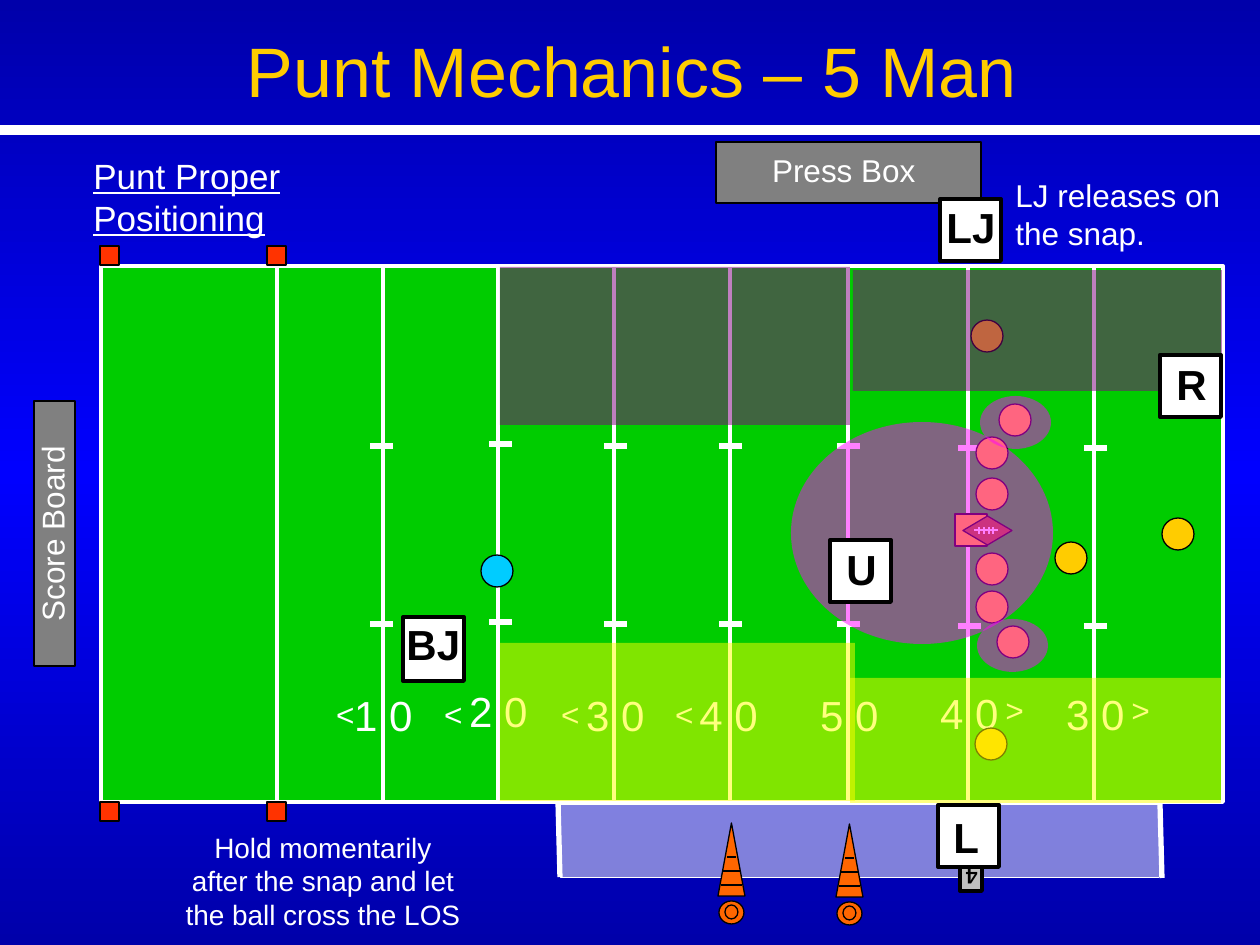
from copy import deepcopy

from pptx import Presentation
from pptx import util as u
from pptx.dml.color import RGBColor
from pptx.enum import dml, shapes, text
from pptx.oxml import ns, xmlchemy

PX = u.Inches(1) / 126
FONT = "Arial"
WHITE = RGBColor(0xFF, 0xFF, 0xFF)
BLACK = RGBColor(0, 0, 0)
NAVY = RGBColor(0, 0, 0xAA)
BLUE = RGBColor(0, 0, 0xFF)
GRAY = RGBColor(0x80, 0x80, 0x80)
SILVER = RGBColor(0xC0, 0xC0, 0xC0)
GREEN = RGBColor(0, 0xCC, 0)
RED = RGBColor(0xFF, 0x33, 0)
ORANGE = RGBColor(0xFF, 0x66, 0)
GOLD = RGBColor(0xFF, 0xCC, 0)
BROWN = RGBColor(0x99, 0x66, 0)
CYAN = RGBColor(0, 0xCC, 0xFF)
YELLOW = RGBColor(0xFF, 0xFF, 0)
PURPLE = RGBColor(0x80, 0, 0x80)
PINK = RGBColor(0xFF, 0, 0xFF)
KIND = shapes.MSO_SHAPE
LEFT, MID, RIGHT = text.PP_ALIGN.LEFT, text.PP_ALIGN.CENTER, text.PP_ALIGN.RIGHT


def emu(*vals):
    """Turn px lengths into EMU."""
    return [round(v * PX) for v in vals]


def add_form(host, kind, box, fill, line=BLACK, width=0.75, alpha=None):
    """Add a preset shape with the given fill and outline."""
    form = host.add_shape(kind, *emu(*box))
    form.shadow.inherit = False
    if fill is None:
        form.fill.background()
    else:
        form.fill.solid()
        form.fill.fore_color.rgb = fill
    if alpha:
        mark = xmlchemy.OxmlElement("a:alpha")
        mark.set("val", str(alpha * 1000))
        form._element.spPr.find(".//" + ns.qn("a:srgbClr")).append(mark)
    if line is None:
        form.line.fill.background()
    else:
        form.line.color.rgb = line
        form.line.width = u.Pt(width)
    return form


def add_line(host, ends, color=WHITE, width=2.25):
    """Add a straight line between two points."""
    line = host.add_connector(shapes.MSO_CONNECTOR.STRAIGHT, *emu(*ends))
    line.line.color.rgb = color
    line.line.width = u.Pt(width)
    line._element.spPr.append(xmlchemy.OxmlElement("a:effectLst"))


def style(frame, size, color, align, bold=False, under=False):
    """Format every run of a text frame."""
    for para in frame.paragraphs:
        para.alignment = align
        for run in para.runs:
            font = run.font
            font.name, font.size = FONT, u.Pt(size)
            font.bold, font.underline = bold, under
            font.color.rgb = color


def add_text(host, words, box, size, color=WHITE, align=LEFT, wrap=True,
             bold=False, under=False, flip=False):
    """Add a text box, with its text upside down if flip is set."""
    label = host.add_textbox(*emu(*box))
    frame = label.text_frame
    frame.text = words
    frame.word_wrap = wrap
    frame.auto_size = text.MSO_AUTO_SIZE.SHAPE_TO_FIT_TEXT
    if flip:
        frame._txBody.bodyPr.set("rot", "10800000")
    style(frame, size, color, align, bold, under)
    return label


def add_badge(host, words, x, y, high, left, top, wide):
    """Add a white official's badge with its letters."""
    group = host.add_group_shape().shapes
    add_form(group, KIND.RECTANGLE, (x, y, 61, high), WHITE, width=2.25)
    add_text(group, words, (left, top, wide, 63), 24, BLACK, bold=True)


def add_cone(host, x, y):
    """Add an orange cone with its bands and base."""
    group = host.add_group_shape().shapes
    add_form(group, KIND.ISOSCELES_TRIANGLE, (x, y, 27, 73), ORANGE)
    add_form(group, KIND.OVAL, (x + 1, y + 78, 25, 23), ORANGE)
    for inset, drop in ((9, 34), (5, 48), (3, 62)):
        add_line(group, (x + inset, y + drop, x + 27 - inset, y + drop), BLACK, 0.75)
    add_form(group, KIND.OVAL, (x + 7, y + 82, 13, 14), None)


def add_ball(host):
    """Add the football with its laces."""
    group = host.add_group_shape().shapes
    add_form(group, KIND.FLOWCHART_DECISION, (963, 516, 49, 29), BROWN)
    add_line(group, (974, 530, 998, 530), WHITE, 0.75)
    for x in (979, 984, 989, 993):
        add_line(group, (x, 527, x, 534), WHITE, 0.75)


def add_field(host):
    """Add the field with its lines, hash marks, numbers and pylons."""
    add_form(host, KIND.RECTANGLE, (101, 266, 1122, 536), GREEN, WHITE, 2.25)
    for x in (277, 383, 498, 614):
        add_line(host, (x, 266, x, 801))
    for x in (730, 848, 968, 1094):
        add_line(host, (x, 268, x, 804))
    for x in (100, 267):
        for y in (246, 802):
            add_form(host, KIND.RECTANGLE, (x, y, 19, 19), RED)
    for x, y in ((370, 446), (489, 444), (604, 446), (719, 446),
                 (837, 446), (958, 448), (1084, 448)):
        for level in (y, y + 178):
            add_line(host, (x, level, x + 23, level), WHITE, 3)
    for words, x, y in (("1 0", 329, 683), ("2 0", 444, 679), ("3 0", 561, 683),
                        ("4 0", 674, 683), ("5 0", 795, 683), ("4 0", 915, 681),
                        ("3 0", 1041, 682)):
        add_text(host, words, (x, y, 96, 63), 24, align=RIGHT)
    for x in (323, 431, 548, 662, 993, 1119):
        add_text(host, "<", (x, 689, 44, 50), 18, align=RIGHT, wrap=False, flip=x > 900)


def add_bench(host):
    """Add the team area, cones and down marker below the field."""
    add_line(host, (558, 801, 560, 877), WHITE, 3)
    area = add_form(host, KIND.RECTANGLE, (560, 804, 599, 73), WHITE, WHITE, 0.25, 50)
    area.line.dash_style = dml.MSO_LINE.ROUND_DOT
    add_line(host, (1160, 804, 1162, 878), WHITE, 3)
    add_cone(host, 836, 824)
    add_cone(host, 718, 823)
    group = host.add_group_shape().shapes
    add_form(group, KIND.RECTANGLE, (960, 864, 22, 27), SILVER, width=2.25)
    add_text(group, "4", (953, 859, 37, 38), 12, BLACK, wrap=False, bold=True, flip=True)


def add_team(host):
    """Add the kicking team and the ball."""
    add_form(host, KIND.RECTANGLE, (955, 514, 32, 32), GOLD)
    for x, y in ((976, 478), (976, 437), (976, 553), (976, 591), (1162, 518),
                 (975, 728), (997, 626), (971, 320), (999, 404), (1055, 542)):
        add_form(host, KIND.OVAL, (x, y, 32, 32), GOLD)
    add_ball(host)


def add_zones(host):
    """Add the see-through zones that the officials watch."""
    for kind, box, color in (
            (KIND.RECTANGLE, (500, 643, 355, 158), YELLOW),
            (KIND.RECTANGLE, (850, 678, 371, 125), YELLOW),
            (KIND.RECTANGLE, (500, 267, 350, 158), PURPLE),
            (KIND.RECTANGLE, (853, 270, 369, 121), PURPLE),
            (KIND.OVAL, (791, 422, 262, 222), PINK),
            (KIND.OVAL, (980, 396, 71, 53), PINK),
            (KIND.OVAL, (977, 619, 71, 53), PINK)):
        add_form(host, kind, box, color, None, alpha=50)


def set_back(slide):
    """Give the slide its blue gradient."""
    fill = slide.background.fill
    fill.gradient()
    fill.gradient_angle = 90
    first = slide.element.find(".//" + ns.qn("a:gs"))
    first.addnext(deepcopy(first))
    for stop, spot, color in zip(fill.gradient_stops, (0, 0.5, 1), (NAVY, BLUE, NAVY)):
        stop.position = spot
        stop.color.rgb = color


def set_title(slide, words):
    """Place and format the title."""
    title = slide.shapes.title
    title.left, title.top, title.width, title.height = emu(28, 21, 1207, 97)
    title.text_frame.text = words
    title.text_frame.vertical_anchor = text.MSO_ANCHOR.TOP
    style(title.text_frame, 40, GOLD, MID)


def main():
    """Build the slide and save it."""
    deck = Presentation()
    deck.slide_width, deck.slide_height = emu(1260, 945)
    slide = deck.slides.add_slide(deck.slide_layouts[5])
    host = slide.shapes
    set_back(slide)
    set_title(slide, "Punt Mechanics – 5 Man")
    add_form(host, KIND.RECTANGLE, (716, 142, 265, 61), GRAY)
    add_text(host, "Press Box", (759, 145, 169, 50), 18, align=RIGHT, wrap=False)
    add_line(host, (0, 130, 1260, 130), WHITE, 6)
    add_text(host, "Punt Proper\vPositioning", (81, 148, 393, 160), 20, under=True)
    add_field(host)
    add_bench(host)
    add_form(host, KIND.RECTANGLE, (34, 401, 41, 265), GRAY)
    board = add_text(host, "Score Board", (-48, 509, 200, 50), 18, align=RIGHT)
    board.rotation = 270
    add_team(host)
    add_zones(host)
    for badge in (("BJ", 403, 617, 64, 394, 612, 83), ("LJ", 940, 199, 62, 934, 195, 96),
                  ("L", 938, 805, 62, 941, 805, 72), ("R", 1160, 355, 62, 1164, 352, 43),
                  ("U", 830, 540, 62, 834, 537, 43)):
        add_badge(host, *badge)
    add_form(host, KIND.OVAL, (481, 555, 32, 32), CYAN)
    add_text(host, "LJ releases on the snap.", (1003, 170, 239, 89), 18)
    add_text(host, "Hold momentarily after the snap and let the ball cross the LOS",
             (171, 824, 304, 115), 16, align=MID)
    deck.save("out.pptx")


if __name__ == "__main__":
    main()
